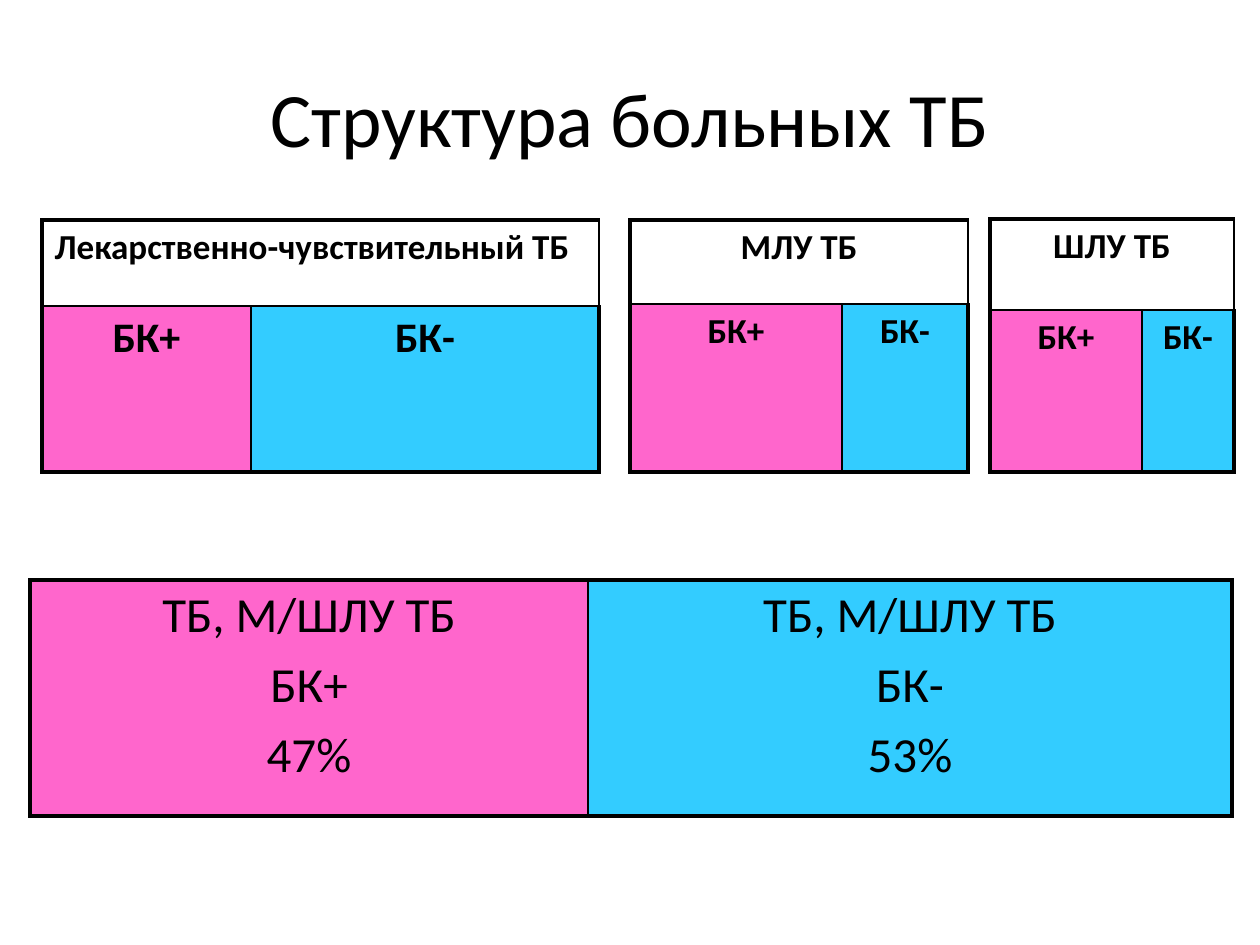
import pptx
import pptx.dml.color
import pptx.enum.text
import pptx.oxml
import pptx.oxml.ns
import pptx.util
from dataclasses import dataclass

PX = 914400 / 126  # EMU in one px


@dataclass(frozen=True)
class Theme:
    font: str = "Calibri"
    ink: str = "000000"
    positive: str = "FF66CC"
    negative: str = "33CCFF"
    title: int = 44
    total: int = 28
    large: int = 24
    label: int = 20
    outer_line: float = 2.25
    inner_line: float = 1


THEME = Theme()
ALIGN = pptx.enum.text.PP_ALIGN

# Content
TITLE = "Структура больных ТБ"
TITLE_BOX = (63, 38, 1134, 157)
# heading, heading alignment, size of the split labels, left, top, columns, rows
GROUPS = [
    ("Лекарственно-чувствительный ТБ", ALIGN.LEFT, THEME.large, 42, 220, (209, 348), (86, 166)),
    ("ШЛУ ТБ", ALIGN.CENTER, THEME.label, 990, 219, (152, 92), (91, 162)),
    ("МЛУ ТБ", ALIGN.CENTER, THEME.label, 630, 220, (212, 126), (84, 168)),
]
SPLIT = [("БК+", THEME.positive), ("БК-", THEME.negative)]
TOTAL_HEADING = "ТБ, М/ШЛУ ТБ"
TOTAL_SHARES = ["47%", "53%"]
TOTAL_PLACE = (30, 580, (558, 644), (236,))


def emu(px):
    return pptx.util.Emu(round(px * PX))


def rgb(colour):
    return pptx.dml.color.RGBColor.from_string(colour)


def write(frame, lines, size, align=ALIGN.CENTER, bold=False, space_before=0):
    for index, line in enumerate(lines):
        paragraph = frame.paragraphs[0] if index == 0 else frame.add_paragraph()
        paragraph.alignment = align
        if space_before:
            paragraph._p.get_or_add_pPr().append(pptx.oxml.parse_xml(
                f'<a:spcBef {pptx.oxml.ns.nsdecls("a")}>'
                f'<a:spcPct val="{space_before * 1000}"/></a:spcBef>'))
        run = paragraph.add_run()
        run.text = line
        run.font.name = THEME.font
        run.font.size = pptx.util.Pt(size)
        run.font.bold = bold
        run.font.color.rgb = rgb(THEME.ink)


def add_grid(slide, left, top, columns, rows):
    """Add an unfilled table with a thick frame and thin inner lines."""
    grid = slide.shapes.add_table(
        len(rows), len(columns), emu(left), emu(top),
        emu(sum(columns)), emu(sum(rows))).table
    grid.first_row = grid.horz_banding = False
    for column, width in zip(grid.columns, columns):
        column.width = emu(width)
    for row, height in zip(grid.rows, rows):
        row.height = emu(height)
    for r in range(len(rows)):
        for c in range(len(columns)):
            edges = {"lnL": c == 0, "lnR": c == len(columns) - 1,
                     "lnT": r == 0, "lnB": r == len(rows) - 1}
            cell = grid.cell(r, c)
            for tag, outer in edges.items():
                width = pptx.util.Pt(THEME.outer_line if outer else THEME.inner_line)
                cell._tc.get_or_add_tcPr().append(pptx.oxml.parse_xml(
                    f'<a:{tag} {pptx.oxml.ns.nsdecls("a")} w="{width}"><a:solidFill>'
                    f'<a:srgbClr val="{THEME.ink}"/></a:solidFill></a:{tag}>'))
            cell.fill.background()
    return grid


def fill_cell(cell, lines, size, colour=None, align=ALIGN.CENTER, bold=False):
    write(cell.text_frame, lines, size, align, bold, space_before=20)
    if colour:
        cell.fill.solid()
        cell.fill.fore_color.rgb = rgb(colour)


def main():
    deck = pptx.Presentation()
    deck.slide_width, deck.slide_height = emu(1260), emu(945)
    slide = deck.slides.add_slide(deck.slide_layouts[6])

    # Title
    title = slide.shapes.add_textbox(*map(emu, TITLE_BOX)).text_frame
    title.word_wrap = True
    title.vertical_anchor = pptx.enum.text.MSO_ANCHOR.MIDDLE
    write(title, [TITLE], THEME.title)

    # Patient groups, each split by smear result
    for heading, align, size, *place in GROUPS:
        group = add_grid(slide, *place)
        group.cell(0, 0).merge(group.cell(0, 1))
        fill_cell(group.cell(0, 0), [heading], THEME.label, align=align, bold=True)
        for c, (result, colour) in enumerate(SPLIT):
            fill_cell(group.cell(1, c), [result], size, colour, bold=True)

    # All patients together
    total = add_grid(slide, *TOTAL_PLACE)
    for c, ((result, colour), share) in enumerate(zip(SPLIT, TOTAL_SHARES)):
        fill_cell(total.cell(0, c), [TOTAL_HEADING, result, share], THEME.total, colour)

    deck.save("out.pptx")


if __name__ == "__main__":
    main()
